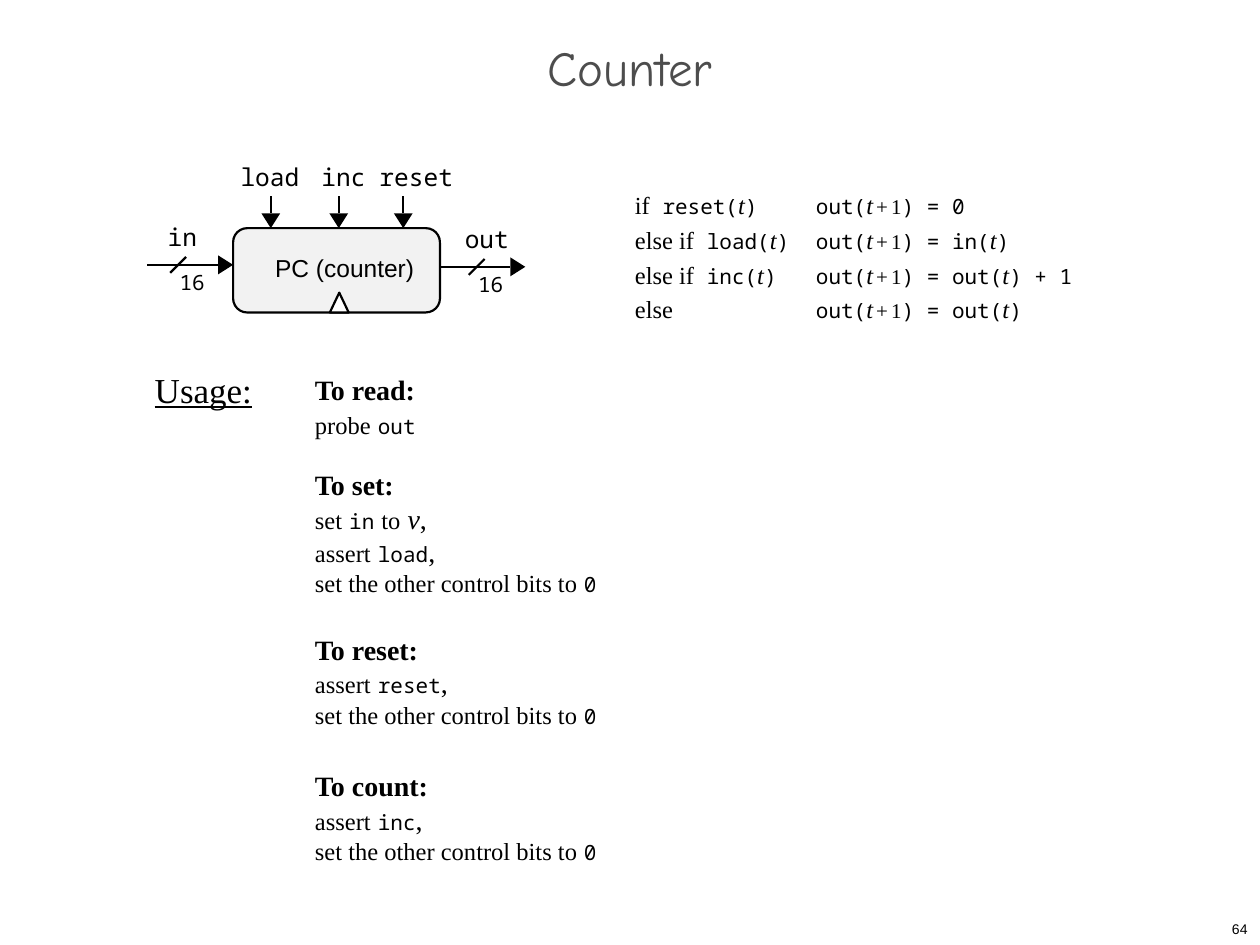
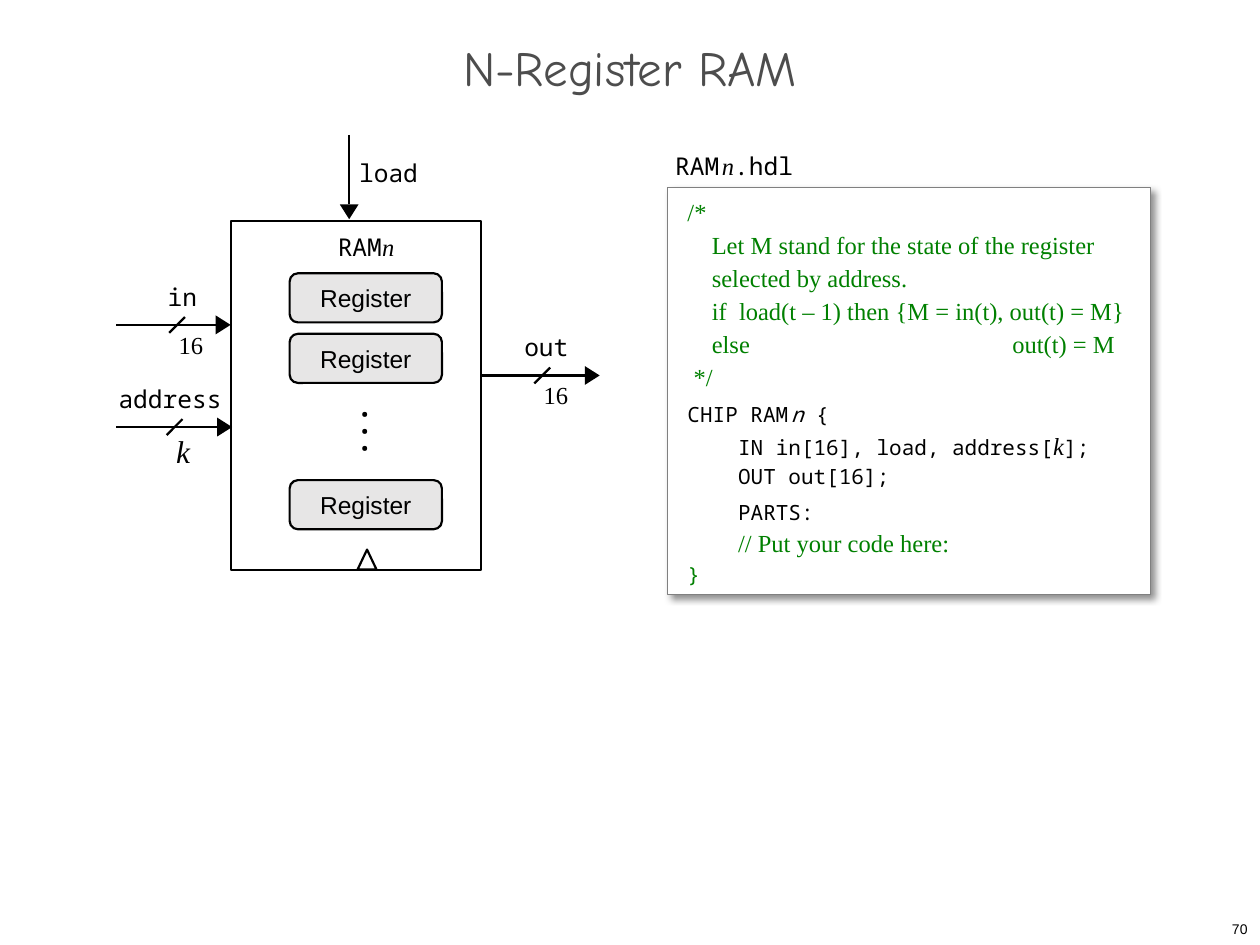
from dataclasses import dataclass, replace

from lxml import etree
from pptx import Presentation
from pptx.dml.color import RGBColor
from pptx.enum import shapes, text
from pptx.oxml import ns
from pptx.util import Cm, Pt


@dataclass(frozen=True)
class Style:
    font: str
    size: float
    color: str = "000000"
    bold: bool = False
    italic: bool = False
    underline: bool = False
    spacing: float = 0


class Theme:
    black, white = "000000", "FFFFFF"
    counter_fill, register_fill, frame = "F2F2F2", "E7E6E6", "808080"
    line_width, frame_width = 1.25, 0.75

    title = Style("Comic Neue", 28, "4D4D4D")
    number = Style("Arial", 8)
    component = Style("Arial", 14)
    pin = Style("Noto Sans Mono", 14)
    pin_wide = replace(pin, spacing=1.5)
    code = Style("Noto Sans Mono", 12)
    code_wide = replace(code, spacing=1.5)
    code_italic = replace(code, italic=True)
    code_green = replace(code, color="008000")
    dots = Style("Noto Sans Mono", 16, bold=True)
    word = Style("Times New Roman", 14)
    comment = replace(word, color="008000")
    math = replace(word, italic=True)
    small = replace(word, size=12)
    thin = replace(word, size=7)
    large = replace(word, size=16)
    large_math = replace(large, italic=True)
    heading = replace(large, bold=True)
    usage = replace(word, size=20, underline=True)
    address_width = replace(math, size=18)


@dataclass
class Box:
    """A rectangle in centimetres."""
    left: float
    top: float
    width: float
    height: float

    def inner(self, left, top, width, height):
        return Box(self.left + left, self.top + top, width, height)

    def point(self, x, y):
        return self.left + x, self.top + y

    def lengths(self):
        return [Cm(v) for v in (self.left, self.top, self.width, self.height)]


@dataclass
class Line:
    """A paragraph: (text, style) pairs with its spacing, indent and tab stops."""
    spans: list
    before: float = 0
    indent: float = 0
    tabs: tuple = ()


def rgb(color):
    return RGBColor.from_string(color)


def write(frame, lines, align=text.PP_ALIGN.LEFT, margins=(0.25, 0.13, 0.25, 0.13)):
    frame.margin_left, frame.margin_top, frame.margin_right, frame.margin_bottom = map(Cm, margins)
    frame.word_wrap = True
    for index, line in enumerate(lines):
        para = frame.paragraphs[0] if index == 0 else frame.add_paragraph()
        para.alignment = align
        para.space_before = Pt(line.before)
        props = para._p.get_or_add_pPr()
        if line.indent:
            props.set("marL", str(Cm(line.indent)))
            props.set("indent", "0")
        if line.tabs:
            stops = etree.SubElement(props, ns.qn("a:tabLst"))
            for stop in line.tabs:
                etree.SubElement(stops, ns.qn("a:tab"), pos=str(Cm(stop)), algn="l")
        for words, style in line.spans:
            span = para.add_run()
            span.text = words
            font = span.font
            font.name, font.size = style.font, Pt(style.size)
            font.bold, font.italic, font.underline = style.bold, style.italic, style.underline
            font.color.rgb = rgb(style.color)
            if style.spacing:
                span._r.get_or_add_rPr().set("spc", str(int(style.spacing * 100)))


def add_text(page, box, lines, **options):
    shape = page.shapes.add_textbox(*box.lengths())
    write(shape.text_frame, lines, **options)
    return shape


def add_label(page, box, *spans):
    return add_text(page, box, [Line(list(spans))], margins=(0, 0, 0, 0))


def paint(shape, fill=None, line=None, width=Theme.line_width):
    shape.shadow.inherit = False
    if fill:
        shape.fill.solid()
        shape.fill.fore_color.rgb = rgb(fill)
    else:
        shape.fill.background()
    if line:
        shape.line.color.rgb = rgb(line)
        shape.line.width = Pt(width)
    else:
        shape.line.fill.background()


def add_block(page, box, kind, fill=None, line=Theme.black, width=Theme.line_width):
    shape = page.shapes.add_shape(kind, *box.lengths())
    paint(shape, fill, line, width)
    return shape


def add_component(page, box, name, fill, margins=(0, 0, 0, 0)):
    shape = add_block(page, box, shapes.MSO_SHAPE.ROUNDED_RECTANGLE, fill)
    shape.text_frame.vertical_anchor = text.MSO_ANCHOR.MIDDLE
    write(shape.text_frame, [Line([(name, Theme.component)])], text.PP_ALIGN.CENTER, margins)


def add_triangle(page, points, fill, line=None):
    first, *rest = [(Cm(x), Cm(y)) for x, y in points]
    builder = page.shapes.build_freeform(*first)
    builder.add_line_segments(rest, close=True)
    paint(builder.convert_to_shape(), fill, line)


def add_line(page, start, end):
    line = page.shapes.add_connector(shapes.MSO_CONNECTOR.STRAIGHT, *map(Cm, (*start, *end)))
    line.line.color.rgb = rgb(Theme.black)
    line.line.width = Pt(Theme.line_width)
    etree.SubElement(line._element.spPr, ns.qn("a:effectLst"))


def add_arrow(page, start, end):
    """A rightward or downward line with a solid head."""
    length, half = 0.3, 0.19
    x, y = end
    if start[1] == y:
        base, wings = (x - length, y), [(x - length, y - half), (x - length, y + half)]
    else:
        base, wings = (x, y - length), [(x - half, y - length), (x + half, y - length)]
    add_line(page, start, base)
    add_triangle(page, [wings[0], end, wings[1]], Theme.black)


def add_clock(page, x, base):
    add_triangle(page, [(x + 0.19, base), (x - 0.19, base), (x, base - 0.4)],
                 Theme.white, Theme.black)


def add_bus(page, box, y, start, end, slash, name, shift, width):
    """An arrow crossed by a slash, with its name above and its width below."""
    add_arrow(page, box.point(start, y), box.point(end, y))
    add_line(page, box.point(slash - 0.16, y + 0.16), box.point(slash + 0.16, y - 0.16))
    add_label(page, box.inner(slash - shift, y - 0.87, 2.2, 0.61), (name, Theme.pin))
    add_label(page, box.inner(slash + 0.03, y + 0.1, 0.74, 0.55), width)


def start_page(deck, title, number):
    page = deck.slides.add_slide(deck.slide_layouts[5])
    holder = page.shapes.title
    holder.left, holder.top, holder.width, holder.height = Box(0, 0.86, 25.4, 1.27).lengths()
    frame = holder.text_frame
    frame.auto_size = text.MSO_AUTO_SIZE.NONE
    frame.vertical_anchor = text.MSO_ANCHOR.MIDDLE
    write(frame, [Line([(title, Theme.title)])], text.PP_ALIGN.CENTER)
    frame.paragraphs[0].line_spacing = 0.7
    footer = add_text(page, Box(20.12, 18.42, 5.28, 0.63),
                      [Line([(str(number), Theme.number)])], align=text.PP_ALIGN.RIGHT)
    footer.text_frame.vertical_anchor = text.MSO_ANCHOR.MIDDLE
    return page


def draw_counter(page, box):
    body = box.inner(1.73, 1.35, 4.17, 1.7)
    add_component(page, body, "PC (counter)", Theme.counter_fill, (0.33, 0, 0, 0.12))
    add_clock(page, *box.point(3.87, 3.05))
    for name, label_left, x in (("load", 1.88, 2.49), ("inc", 3.51, 3.86), ("reset", 4.68, 5.16)):
        add_label(page, box.inner(label_left, 0.01, 1.6, 0.61), (name, Theme.pin))
        add_arrow(page, box.point(x, 0.71), box.point(x, 1.35))
    width = ("16", Theme.code)
    add_bus(page, box, 2.09, 0, 1.73, 0.62, "in", 0.21, width)
    add_bus(page, box, 2.13, 5.9, 7.62, 6.64, "out", 0.24, width)


def write_counter_rules(page, box):
    t = ("t", Theme.math)
    next_out = [("\tout(", Theme.code), t, (" ", Theme.thin), ("+", Theme.small),
                (" ", Theme.thin), ("1", Theme.small)]
    rules = [("if", "reset", [(") = 0", Theme.code)]),
             ("else if", "load", [(") = in(", Theme.code), t, (")", Theme.code)]),
             ("else if", "inc", [(") = out(", Theme.code), t, (") + 1", Theme.code)]),
             ("else", None, [(") = out(", Theme.code), t, (")", Theme.code)])]
    lines = []
    for keyword, pin, value in rules:
        test = [(f" {pin}(", Theme.code), t, (")", Theme.code)] if pin else []
        lines.append(Line([(keyword, Theme.word), *test, *next_out, *value],
                          before=3 if lines else 6, tabs=(3.65,)))
    add_text(page, box, lines)


def write_usage(page, box):
    gap, comma = (" ", Theme.large), (",", Theme.large)

    def assert_pin(pin):
        return [[("assert", Theme.word), gap, (pin, Theme.code), comma],
                [("set the other control bits to ", Theme.word), ("0", Theme.code)]]

    probe = [("probe", Theme.word), gap, ("out", Theme.code)]
    set_in = [("set", Theme.word), gap, ("in", Theme.code), gap, ("to", Theme.word), gap,
              ("v", Theme.large_math), comma]
    add_text(page, box.inner(0, 0, 3.12, 1.12), [Line([("Usage:", Theme.usage)], before=6)])
    for top, heading, before, steps in (
            (0.1, "To read:", 0, [probe]),
            (2.01, "To set:", 3, [set_in, *assert_pin("load")]),
            (5.33, "To reset:", 3, assert_pin("reset")),
            (8.08, "To count:", 3, assert_pin("inc"))):
        lines = [Line([(heading, Theme.heading)], before), *map(Line, steps)]
        add_text(page, box.inner(3.23, top, 11.46, 0.7 * len(lines) + 0.2), lines)


def draw_ram(page, box):
    add_block(page, box.inner(2.31, 1.73, 5.05, 7.04), shapes.MSO_SHAPE.RECTANGLE)
    add_label(page, box.inner(4.47, 1.95, 1.6, 0.61), ("RAM", Theme.pin), ("n", Theme.math))
    for top in (2.79, 4.01, 6.96):
        add_component(page, box.inner(3.5, top, 3.07, 0.99), "Register", Theme.register_fill)
    dots = add_label(page, box.inner(4.21, 6.12, 1.96, 0.69), ("...", Theme.dots))
    dots.rotation = 90
    add_clock(page, *box.point(5.06, 8.76))
    add_arrow(page, box.point(4.7, 0), box.point(4.7, 1.7))
    add_label(page, box.inner(4.9, 0.46, 1.6, 0.61), ("load", Theme.pin))
    width = ("16", Theme.word)
    add_bus(page, box, 3.83, 0, 2.31, 1.23, "in", 0.19, width)
    add_bus(page, box, 5.89, 0, 2.34, 1.18, "address", 1.13, ("k", Theme.address_width))
    add_bus(page, box, 4.85, 7.36, 9.75, 8.59, "out", 0.36, width)


def add_shadow(shape):
    effects = shape._element.spPr.find(ns.qn("a:effectLst"))
    shadow = etree.SubElement(effects, ns.qn("a:outerShdw"), blurRad=str(Pt(4)),
                              dist=str(Pt(3)), dir="2700000", algn="tl", rotWithShape="0")
    color = etree.SubElement(shadow, ns.qn("a:srgbClr"), val=Theme.black)
    etree.SubElement(color, ns.qn("a:alpha"), val="43000")


def write_hdl(page, box):
    comment_indent, code_indent = 0.49, 1.02

    def comment(words, **layout):
        return Line([(words, Theme.comment)], before=2, **layout)

    def code(*spans, before=2):
        return Line(list(spans), before, code_indent)

    panel = add_block(page, box, shapes.MSO_SHAPE.RECTANGLE, Theme.white,
                      Theme.frame, Theme.frame_width)
    add_shadow(panel)
    panel.text_frame.vertical_anchor = text.MSO_ANCHOR.TOP
    write(panel.text_frame, [
        comment("/*"),
        comment("Let M stand for the state of the register", indent=comment_indent),
        comment("selected by address.", indent=comment_indent),
        comment("if  load(t – 1) then {M = in(t), out(t) = M}", indent=comment_indent),
        comment("\telse\tout(t) = M", tabs=(comment_indent, 6.55)),
        comment(" */"),
        Line([("CHIP RA", Theme.code), ("M", Theme.code_wide), ("n", Theme.code_italic),
              (" {", Theme.code)], before=6),
        code(("IN in[16], load, address[", Theme.code), ("k", Theme.math), ("];", Theme.code)),
        code(("OUT out[16];", Theme.code)),
        code(("PARTS:", Theme.code), before=6),
        code(("// Put your code here:", Theme.comment)),
        Line([("}", Theme.code_green)], before=2),
    ], margins=(0.4, 0.2, 0.4, 0))
    add_text(page, box.inner(-0.1, -0.86, 5.33, 1.14), [
        Line([("RA", Theme.pin), ("M", Theme.pin_wide), ("n", Theme.math),
              (".hdl", Theme.pin)], before=3)])


def main():
    deck = Presentation()
    deck.slide_width, deck.slide_height = Cm(25.4), Cm(19.05)

    counter = start_page(deck, "Counter", 64)
    draw_counter(counter, Box(2.97, 3.25, 7.62, 3.05))
    write_counter_rules(counter, Box(12.55, 3.71, 12.8, 3.58))
    write_usage(counter, Box(2.87, 7.29, 14.69, 10.32))

    ram = start_page(deck, "N-Register RAM", 70)
    draw_ram(ram, Box(2.34, 2.72, 9.75, 8.77))
    write_hdl(ram, Box(13.46, 3.78, 9.73, 8.2))

    deck.save("out.pptx")


if __name__ == "__main__":
    main()
